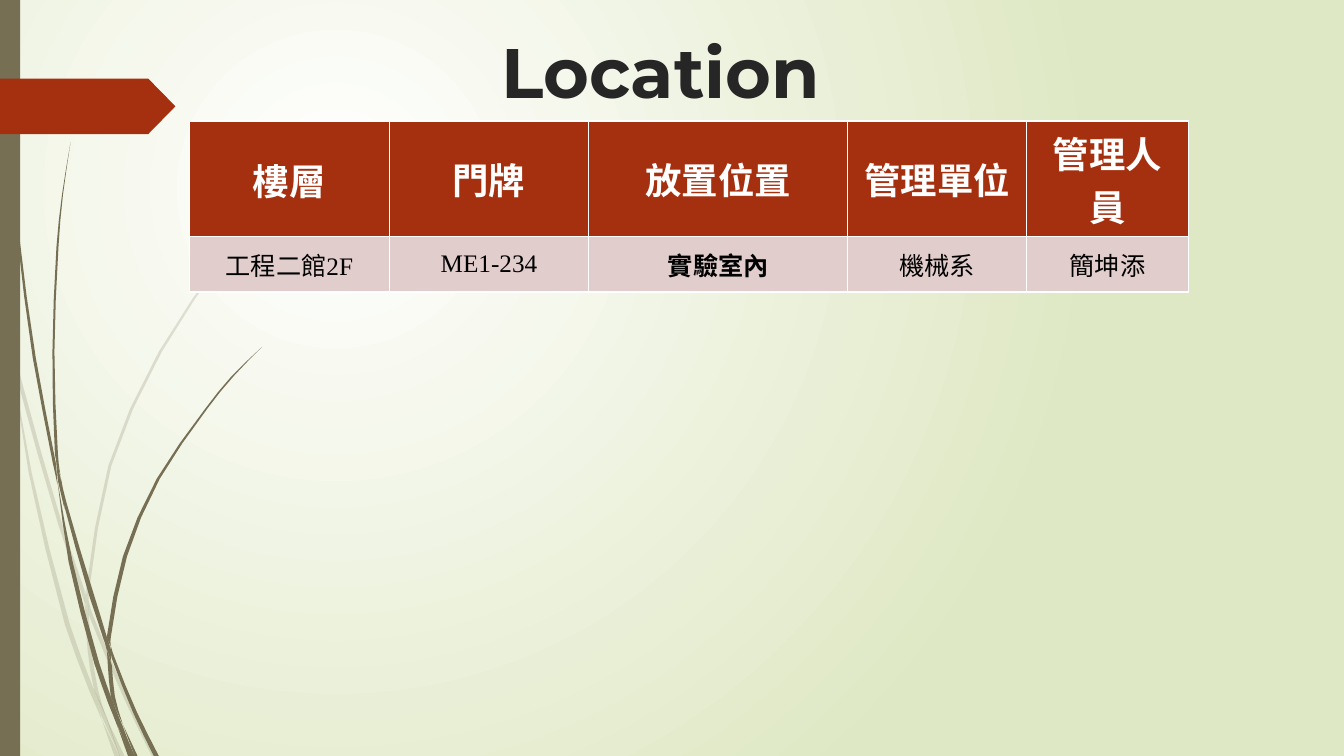
"""Build the Location slide: a floor and room table beside tall grass."""
import pptx
import pptx.dml.color
import pptx.enum.shapes
import pptx.enum.text
import pptx.oxml.ns
import pptx.util
from lxml import etree

RGB = pptx.dml.color.RGBColor
WHITE, BLACK, INK = RGB(255, 255, 255), RGB(0, 0, 0), RGB(0x26, 0x26, 0x26)
RUST, ROSE = RGB(0xA5, 0x30, 0x10), RGB(0xE1, 0xCD, 0xCC)
OLIVE, LIME = RGB(0x76, 0x6F, 0x54), RGB(0xDF, 0xE8, 0xC4)
WIDE, TALL = 13.33, 7.5

TITLE = "Location"
ROWS = [
    ["樓層", "門牌", "放置位置", "管理單位", "管理人員"],
    ["工程二館2F", "ME1-234", "實驗室內", "機械系", "簡坤添"],
]
COLS = [1.98, 1.98, 2.57, 1.77, 1.61]
ROW = 0.55
LEFT, TOP = 1.88, 1.2
STRONG = "實驗室內"

# Each blade is a list of (centre x, y, width) from tip to root.
PALE = [
    [(0, 2.82, 0), (0.02, 2.99, 0.04), (0.07, 3.22, 0.04), (0.11, 3.5, 0)],
    [(0.14, 3.45, 0), (0.19, 3.76, 0.04), (0.6, 5.21, 0.04),
     (0.82, 5.86, 0.04), (0.84, 5.99, 0)],
    [(0.88, 5.96, 0), (0.9, 6.1, 0.04), (1.25, 6.93, 0.04),
     (1.53, TALL, 0.05)],
    [(1.05, 7.11, 0), (1.21, TALL, 0.05)],
    [(0.11, 3.5, 0), (0.3, 4.69, 0.03), (0.67, 6.2, 0.05),
     (0.91, 6.85, 0.05), (1.01, 7.14, 0)],
    [(0.84, 5.99, 0), (0.86, 6.1, 0.04), (0.89, 6.46, 0.04),
     (0.95, 6.83, 0.04), (1.05, 7.11, 0)],
    [(3.12, 1.53, 0), (2.68, 1.98, 0.02), (2.29, 2.45, 0.02),
     (1.59, 3.49, 0.03), (1.09, 4.62, 0.03), (0.87, 5.85, 0.03),
     (0.88, 5.96, 0)],
    [(1.01, 7.14, 0), (1.16, TALL, 0.05)],
    [(0.85, 5.86, 0), (0.86, 5.97, 0.04), (0.88, 6.1, 0)],
    [(0.93, 6.83, 0), (1.03, 7.1, 0.05), (1.19, TALL, 0)],
]
DARK = [
    [(0.04, 0, 0.01), (0.08, 1.1, 0.02), (0.18, 2.33, 0.02),
     (0.34, 3.55, 0.03), (0.54, 4.6, 0.03), (0.57, 4.81, 0)],
    [(0.6, 4.72, 0), (0.64, 4.97, 0.03), (0.91, 5.91, 0.05),
     (1.04, 6.32, 0.04), (1.06, 6.45, 0)],
    [(1.1, 6.41, 0), (1.12, 6.52, 0.03), (1.34, 7.07, 0.04),
     (1.55, TALL, 0.05)],
    [(0.57, 4.77, 0), (0.7, 5.57, 0.04), (0.96, 6.58, 0.05),
     (1.1, 6.98, 0.05), (1.17, 7.22, 0)],
    [(0.7, 1.41, 0), (0.62, 1.93, 0.01), (0.57, 2.45, 0.02),
     (0.53, 3.49, 0.02), (0.56, 4.51, 0.03), (0.6, 4.72, 0)],
    [(1.22, 7.19, 0), (1.35, TALL, 0.03)],
    [(0.55, 4.49, 0), (0.59, 4.77, 0.03), (0.64, 5.05, 0)],
    [(2.6, 3.44, 0), (2.31, 3.73, 0.02), (2.05, 4.05, 0.02),
     (1.57, 4.75, 0.03), (1.24, 5.52, 0.04), (1.08, 6.32, 0.04),
     (1.1, 6.41, 0)],
    [(1.17, 7.22, 0), (1.29, TALL, 0.04)],
    [(1.06, 6.45, 0), (1.09, 6.6, 0.04), (1.12, 6.91, 0.04), (1.22, 7.19, 0)],
    [(1.06, 6.31, 0), (1.08, 6.44, 0.04), (1.1, 6.56, 0)],
    [(1.1, 6.91, 0), (1.19, 7.2, 0.05), (1.32, TALL, 0.03)],
]


def inch(*nums):
    return [pptx.util.Inches(n) for n in nums]


def write(frame, text, size, font, color, bold=False):
    line = frame.paragraphs[0]
    line.alignment = pptx.enum.text.PP_ALIGN.CENTER
    run = line.add_run()
    run.text = text
    run.font.size, run.font.name = pptx.util.Pt(size), font
    run.font.color.rgb, run.font.bold = color, bold


def paint(shape, color):
    shape.shadow.inherit = False
    shape.fill.solid()
    shape.fill.fore_color.rgb = color
    shape.line.fill.background()


def smooth(blade, steps=2):
    slopes = []
    for i in range(len(blade)):
        a, b = blade[max(i - 1, 0)], blade[min(i + 1, len(blade) - 1)]
        slopes.append((b[0] - a[0]) / (b[1] - a[1]))
    points = []
    for i, (a, b) in enumerate(zip(blade, blade[1:])):
        gap = b[1] - a[1]
        for k in range(steps):
            t = k / steps
            ease = t * t * (3 - 2 * t)
            bend = gap * (slopes[i] * t * (1 - t) ** 2
                          - slopes[i + 1] * t * t * (1 - t))
            points.append((a[0] + (b[0] - a[0]) * ease + bend,
                           a[1] + gap * t, a[2] + (b[2] - a[2]) * t))
    return points + [blade[-1]]


def grow(shapes, blade, alpha=100):
    points = smooth(blade)
    edge = [inch(x - w / 2, y) for x, y, w in points]
    edge += [inch(x + w / 2, y) for x, y, w in reversed(points)]
    form = shapes.build_freeform(*edge[0], scale=1)
    form.add_line_segments(edge[1:], close=True)
    leaf = form.convert_to_shape()
    paint(leaf, OLIVE)
    if alpha < 100:
        tint = leaf.fill._xPr.find(".//" + pptx.oxml.ns.qn("a:srgbClr"))
        etree.SubElement(tint, pptx.oxml.ns.qn("a:alpha"), val=str(alpha * 1000))


def glow(slide):
    fill = slide.background.fill
    fill.gradient()
    for stop, color, spot in zip(fill.gradient_stops, (WHITE, LIME), (0, 1)):
        stop.color.rgb, stop.position = color, spot
    grad = slide._element.find(".//" + pptx.oxml.ns.qn("a:gradFill"))
    grad.remove(grad.find(pptx.oxml.ns.qn("a:lin")))
    ring = etree.SubElement(grad, pptx.oxml.ns.qn("a:path"), path="circle")
    etree.SubElement(ring, pptx.oxml.ns.qn("a:fillToRect"),
                     l="50000", t="50000", r="100000", b="100000")


def fill_table(shapes):
    table = shapes.add_table(len(ROWS), len(COLS), *inch(
        LEFT, TOP, sum(COLS), ROW * len(ROWS))).table
    for col, wide in zip(table.columns, COLS):
        col.width = pptx.util.Inches(wide)
    for r, texts in enumerate(ROWS):
        head = r == 0
        for c, text in enumerate(texts):
            cell = table.cell(r, c)
            cell.vertical_anchor = pptx.enum.text.MSO_ANCHOR.MIDDLE
            if c == 0:
                cell.margin_left, cell.margin_top = inch(0.01, 0.01)
                cell.margin_right, cell.margin_bottom = inch(0.01, 0)
            cell.fill.solid()
            cell.fill.fore_color.rgb = RUST if head else ROSE
            bold = head or text == STRONG
            write(cell.text_frame, text, 26 if head else 18,
                  "League Spartan" if bold else "Times New Roman",
                  WHITE if head else BLACK, bold)


def main():
    deck = pptx.Presentation()
    deck.slide_width, deck.slide_height = inch(WIDE, TALL)
    slide = deck.slides.add_slide(deck.slide_layouts[5])
    shapes = slide.shapes
    glow(slide)
    for blade in PALE:
        grow(shapes, blade, alpha=20)
    for blade in DARK:
        grow(shapes, blade)
    kind = pptx.enum.shapes.MSO_SHAPE
    paint(shapes.add_shape(kind.RECTANGLE, *inch(0, 0, 0.2, TALL)), OLIVE)
    tag = shapes.add_shape(kind.PENTAGON, *inch(0, 0.78, 1.74, 0.55))
    tag.adjustments[0] = 0.49
    paint(tag, RUST)
    title = shapes.title
    title.left, title.top, title.width, title.height = inch(LEFT, 0.23, 9.35, 0.97)
    frame = title.text_frame
    frame.vertical_anchor = pptx.enum.text.MSO_ANCHOR.MIDDLE
    frame.auto_size = pptx.enum.text.MSO_AUTO_SIZE.NONE
    frame.margin_bottom = pptx.util.Inches(0.09)
    write(frame, TITLE, 50, "Montserrat", INK, True)
    fill_table(shapes)
    deck.save("out.pptx")


if __name__ == "__main__":
    main()
